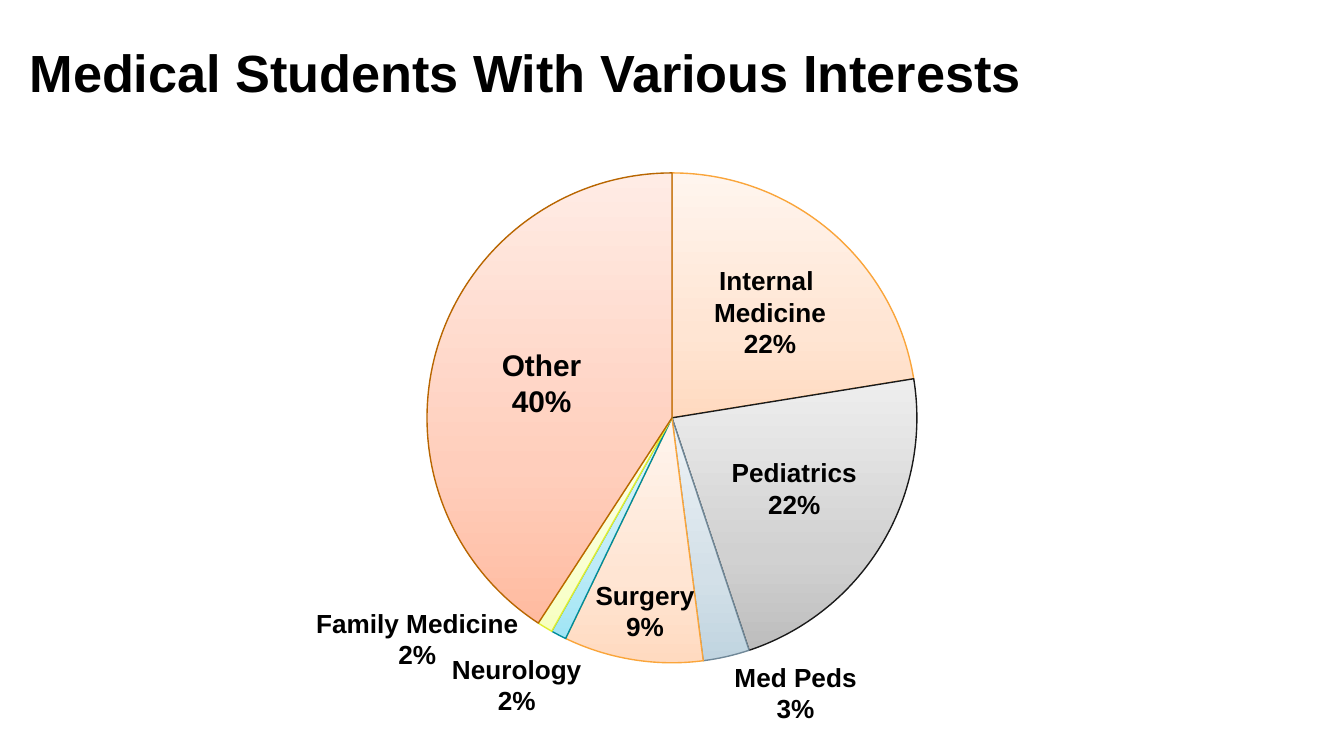
from pptx import Presentation
from pptx.chart.data import CategoryChartData
from pptx.dml.color import RGBColor
from pptx.enum.chart import XL_CHART_TYPE
from pptx.enum.text import MSO_ANCHOR, MSO_AUTO_SIZE, PP_ALIGN
from pptx.oxml import parse_xml
from pptx.oxml.ns import nsdecls
from pptx.util import Inches, Pt

BLACK = RGBColor(0x00, 0x00, 0x00)
FONT = "Arial"

# Gradient stops at 0, 35 and 100 percent, then the outline
ORANGE = ("FFDAC0", "FFE5D3", "FFF5EE", RGBColor(0xFA, 0xA5, 0x3A))
GRAY = ("BDBDBD", "D1D1D1", "EEEEEE", RGBColor(0x1A, 0x1A, 0x1A))
BLUE = ("C0D4E0", "D3E0E8", "EEF3F7", RGBColor(0x70, 0x88, 0x98))
CYAN = ("A0E5F5", "BEEBF7", "E5F8FD", RGBColor(0x00, 0x8C, 0x9A))
LIME = ("F7FFC0", "F9FFD3", "FDFFEE", RGBColor(0xE0, 0xEE, 0x30))
RED = ("FFBBA0", "FFCEBC", "FFECE5", RGBColor(0xB8, 0x66, 0x00))
SLICES = [(22, ORANGE), (22, GRAY), (3, BLUE), (9, ORANGE),
          (1, CYAN), (1, LIME), (40, RED)]


def format_text(frame, size):
    for para in frame.paragraphs:
        for span in para.runs:
            span.font.name = FONT
            span.font.size = Pt(size)
            span.font.bold = True
            span.font.color.rgb = BLACK


# Widescreen page, 16 to 9
deck = Presentation()
deck.slide_width = Inches(10)
deck.slide_height = Inches(10) * 9 // 16
page = deck.slides.add_slide(deck.slide_layouts[5])

# Title
title = page.shapes.title
title.left, title.top = Inches(0.12), Inches(0.2)
title.width, title.height = Inches(7.69), Inches(0.63)
frame = title.text_frame
frame.text = "Medical Students With Various Interests"
frame.margin_left = frame.margin_right = Inches(0.1)
frame.margin_top = frame.margin_bottom = Inches(0.1)
frame.vertical_anchor = MSO_ANCHOR.TOP
frame.auto_size = MSO_AUTO_SIZE.NONE
frame.paragraphs[0].alignment = PP_ALIGN.LEFT
format_text(frame, 28)

# Pie chart
data = CategoryChartData()
data.categories = [str(number) for number in range(1, len(SLICES) + 1)]
data.add_series("Series 1", [value for value, colors in SLICES])
chart = page.shapes.add_chart(
    XL_CHART_TYPE.PIE, Inches(2.19), Inches(1.15), Inches(5.62), Inches(3.92), data
).chart
chart.has_title = False
chart.has_legend = False
chart.font.name = FONT
chart.font.size = Pt(10)
chart.font.color.rgb = BLACK
plot = chart.plots[0]
plot.vary_by_categories = True

# Pie size within the chart
plot_area = chart._chartSpace.chart.plotArea
for layout in plot_area.findall("{*}layout"):
    plot_area.remove(layout)
plot_area.insert(0, parse_xml(
    f'<c:layout {nsdecls("c")}><c:manualLayout><c:layoutTarget val="inner"/>'
    '<c:xMode val="edge"/><c:yMode val="edge"/><c:x val="0.175"/><c:y val="0.035"/>'
    '<c:w val="0.65"/><c:h val="0.93"/></c:manualLayout></c:layout>'))

# Slice gradients and outlines
series = plot.series[0]
for index, (value, (dark, middle, light, outline)) in enumerate(SLICES):
    line = series.points[index].format.line
    line.color.rgb = outline
    line.width = Pt(0.75)
    stops = "".join(
        f'<a:gs pos="{position}000"><a:srgbClr val="{color}"/></a:gs>'
        for position, color in ((0, dark), (35, middle), (100, light)))
    properties = series._element.get_or_add_dPt_for_point(index).get_or_add_spPr()
    properties.insert(0, parse_xml(
        f'<a:gradFill {nsdecls("a")} rotWithShape="1"><a:gsLst>{stops}</a:gsLst>'
        '<a:lin ang="16200000" scaled="1"/></a:gradFill>'))

# Slice labels: lines, left, top, width, height, text size
LABELS = [
    (("Internal ", "Medicine", "22%"), 5.21, 1.92, 1.04, 0.81, 14),
    (("Pediatrics", "22%"), 5.34, 3.35, 1.14, 0.57, 14),
    (("Surgery", "9%"), 4.33, 4.26, 0.94, 0.57, 14),
    (("Med Peds", "3%"), 5.36, 4.87, 1.12, 0.57, 14),
    (("Neurology", "2%"), 3.26, 4.81, 1.17, 0.57, 14),
    (("Family Medicine", "2%"), 2.25, 4.47, 1.71, 0.57, 14),
    (("Other", "40%"), 3.63, 2.53, 0.8, 0.64, 16),
]
for lines, left, top, width, height, size in LABELS:
    box = page.shapes.add_textbox(Inches(left), Inches(top), Inches(width), Inches(height))
    frame = box.text_frame
    frame.word_wrap = False
    frame.auto_size = MSO_AUTO_SIZE.SHAPE_TO_FIT_TEXT
    frame.text = "\n".join(lines)
    for para in frame.paragraphs:
        para.alignment = PP_ALIGN.CENTER
    format_text(frame, size)

deck.save("out.pptx")
